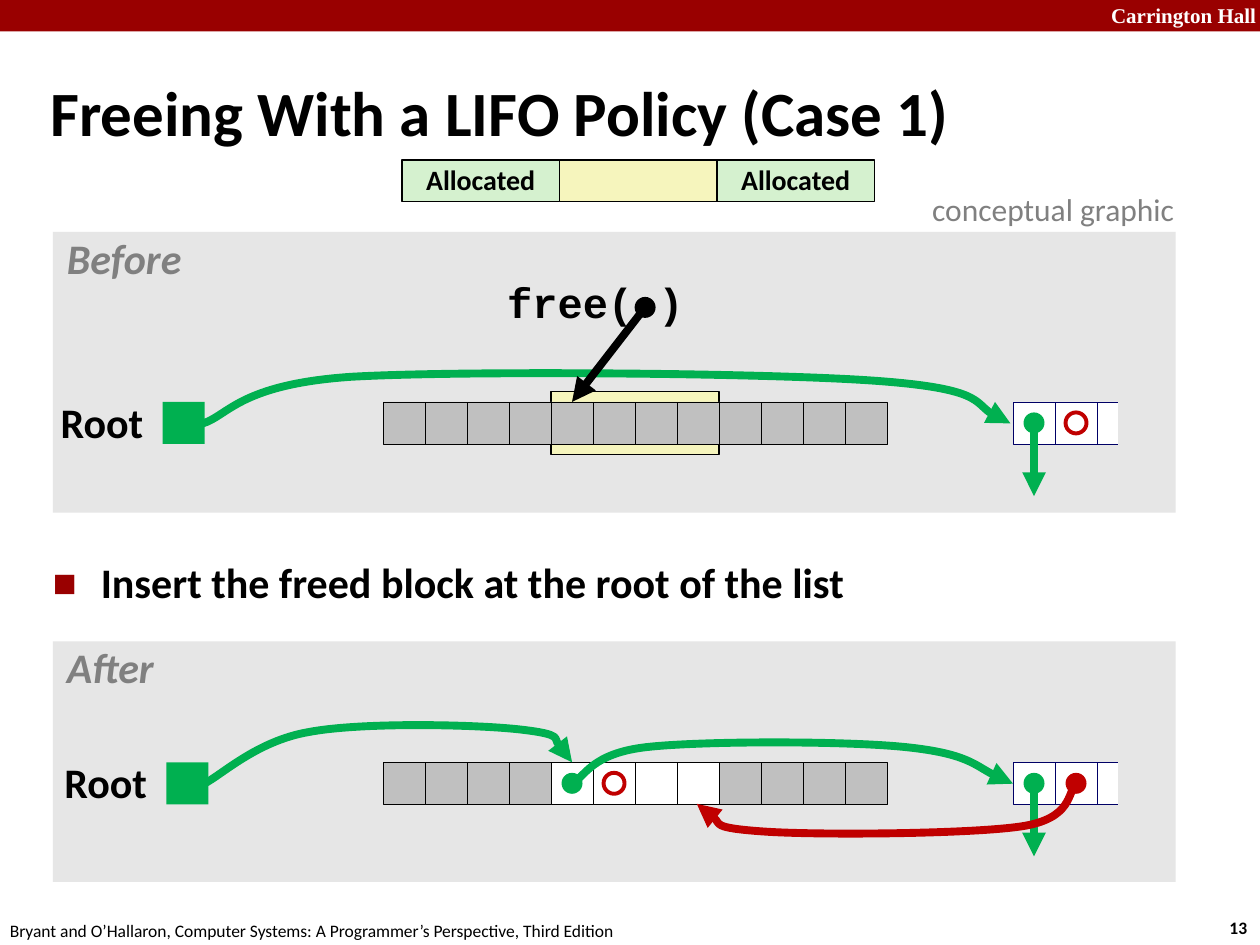
import lxml.etree
import pptx
import pptx.dml.color
import pptx.enum.shapes
import pptx.enum.text
import pptx.oxml.ns
import pptx.util

RGB = pptx.dml.color.RGBColor
Inches = pptx.util.Inches
Pt = pptx.util.Pt
qn = pptx.oxml.ns.qn
KIND = pptx.enum.shapes.MSO_SHAPE
ALIGN = pptx.enum.text.PP_ALIGN
ANCHOR = pptx.enum.text.MSO_ANCHOR

BLACK = RGB(0x00, 0x00, 0x00)
WHITE = RGB(0xFF, 0xFF, 0xFF)
MAROON = RGB(0x99, 0x00, 0x00)
RED = RGB(0xC0, 0x00, 0x00)
GREEN = RGB(0x00, 0xB0, 0x50)
NAVY = RGB(0x00, 0x00, 0x66)
GRAY = RGB(0x80, 0x80, 0x80)
SILVER = RGB(0xC0, 0xC0, 0xC0)
PALE = RGB(0xE6, 0xE6, 0xE6)
CREAM = RGB(0xF6, 0xF5, 0xBD)
MINT = RGB(0xD5, 0xF1, 0xCF)

CELL = 1 / 3
DOT = 1 / 6
HEAP = 2.62
LIST = 7.62


def write(frame, text, size=24, font="Calibri", color=BLACK, bold=True,
          italic=False, align=ALIGN.LEFT, space=1.0, wrap=False,
          anchor=ANCHOR.TOP, inset=(0.1, 0.05)):
    frame.word_wrap = wrap
    frame.auto_size = pptx.enum.text.MSO_AUTO_SIZE.NONE
    frame.vertical_anchor = anchor
    frame.margin_left = frame.margin_right = Inches(inset[0])
    frame.margin_top = frame.margin_bottom = Inches(inset[1])
    para = frame.paragraphs[0]
    para.alignment = align
    para.line_spacing = space
    run = para.add_run()
    run.text = text
    face = run.font
    face.name, face.size, face.bold, face.italic = font, Pt(size), bold, italic
    face.color.rgb = color
    return para


def label(host, box, text, **style):
    write(host.add_textbox(*map(Inches, box)).text_frame, text, **style)


def tag(host, box, text, **style):
    label(host, box, text, align=ALIGN.CENTER, space=0.9, inset=(0.05, 0.05), **style)


def shape(host, box, fill=None, line=None, width=0.25, kind=KIND.RECTANGLE):
    item = host.add_shape(kind, *map(Inches, box))
    item.shadow.inherit = False
    if fill is None:
        item.fill.background()
    else:
        item.fill.solid()
        item.fill.fore_color.rgb = fill
    if line is None:
        item.line.fill.background()
    else:
        item.line.color.rgb = line
        item.line.width = Pt(width)
    return item


def dot(host, x, y, color, ring=False):
    box = (x - DOT / 2, y - DOT / 2, DOT, DOT)
    if ring:
        shape(host, box, line=color, width=2.25, kind=KIND.OVAL)
    else:
        shape(host, box, color, kind=KIND.OVAL)


def point(item, color):
    item.line.color.rgb = color
    item.line.width = Pt(4.5)
    line = item.element.spPr.find(qn("a:ln"))
    lxml.etree.SubElement(line, qn("a:tailEnd"), type="triangle")


def arrow(host, start, end, color):
    straight = pptx.enum.shapes.MSO_CONNECTOR.STRAIGHT
    item = host.add_connector(straight, *map(Inches, start + end))
    point(item, color)
    lxml.etree.SubElement(item.element.spPr, qn("a:effectLst"))
    return item


def curve(host, left, top, spots, color):
    spots = [(Inches(left + x), Inches(top + y)) for x, y in spots]
    maker = host.build_freeform(*spots[0], scale=1.0)
    maker.add_line_segments(spots[1:], close=False)
    item = maker.convert_to_shape()
    item.shadow.inherit = False
    item.fill.background()
    track = next(item.element.iter(qn("a:path")))
    steps = track.findall(qn("a:lnTo"))
    for i in range(0, len(steps), 3):
        bend = lxml.etree.SubElement(track, qn("a:cubicBezTo"))
        for step in steps[i:i + 3]:
            bend.append(step[0])
            track.remove(step)
    point(item, color)


def row(host, x, y, fills, line):
    return [shape(host, (x + i * CELL, y, CELL, CELL), fill, line)
            for i, fill in enumerate(fills)]


def panel(host, box, title, base, root, fills, ring):
    left, top = box[:2]
    y = top + base
    mid = y + CELL / 2
    tag(host, (left + 0.05, top, 1.03 if ring else 0.81, 0.47), title,
        color=GRAY, italic=True)
    tag(host, (left + root - 0.86, y - 0.05, 0.76, 0.47), "Root")
    shape(host, (left + root, y, CELL, CELL), GREEN)
    cells = row(host, left + HEAP, y, fills, BLACK)
    group = host.add_group_shape().shapes
    row(group, left + LIST, y, [WHITE] * 3, NAVY)
    shape(group, (left + LIST + 2.5 * CELL, y - 0.08, CELL, 0.5), PALE)
    x = left + LIST + CELL / 2
    dot(host, x, mid, GREEN)
    arrow(host, (x, mid), (x, mid + 0.58), GREEN)
    dot(host, x + CELL, mid, RED, ring)
    return cells


def before(host, box):
    left, top = box[:2]
    shape(host, box, PALE)
    shape(host, (left + HEAP + 4 * CELL, top + 1.27, 4 * CELL, 0.5), CREAM, BLACK, 0.75)
    curve(host, left, top, [
        (1.19, 1.52), (1.39, 1.46), (1.48, 1.21), (2.37, 1.15),
        (3.25, 1.1), (5.63, 1.12), (6.5, 1.18),
        (7.37, 1.24), (7.37, 1.45), (7.6, 1.52)], GREEN)
    cells = panel(host, box, "Before", 1.35, 0.87, [SILVER] * 12, True)
    tag(host, (left + 3.55, top + 0.35, 1.51, 0.47), "free( )", font="Courier New")
    x, y = left + 4.7, top + 0.6
    dot(host, x, y, BLACK)
    call = arrow(host, (x, y), (left + 4.12, top + 1.35), BLACK)
    call.end_connect(cells[4], 0)


def after(host, box):
    left, top = box[:2]
    shape(host, box, PALE)
    fills = [SILVER] * 4 + [WHITE] * 4 + [SILVER] * 4
    panel(host, box, "After", 0.96, 0.9, fills, False)
    x, y = left + HEAP + 4.5 * CELL, top + 0.96 + CELL / 2
    dot(host, x, y, GREEN)
    dot(host, x + CELL, y, RED, True)
    curve(host, left, top, [
        (4.12, 1.13), (4.22, 1.08), (4.27, 0.89), (4.71, 0.84),
        (5.15, 0.79), (6.29, 0.79), (6.77, 0.84),
        (7.25, 0.89), (7.44, 1.07), (7.62, 1.13)], GREEN)
    curve(host, left, top, [
        (8.12, 1.14), (8.05, 1.19), (8.1, 1.41), (7.68, 1.47),
        (7.27, 1.53), (6.07, 1.54), (5.64, 1.51),
        (5.21, 1.48), (5.22, 1.34), (5.11, 1.29)], RED)
    curve(host, left, top, [
        (1.2, 1.13), (1.34, 1.06), (1.62, 0.79), (2.03, 0.72),
        (2.45, 0.64), (3.36, 0.66), (3.71, 0.7),
        (4.06, 0.74), (4.04, 0.9), (4.12, 0.96)], GREEN)


def blocks(host, box):
    left, top, wide, high = box
    group = host.add_group_shape().shapes
    for i, (text, fill) in enumerate([("Allocated", MINT), ("", CREAM), ("Allocated", MINT)]):
        item = shape(group, (left + i * wide / 3, top, wide / 3, high), fill, BLACK, 1)
        if text:
            write(item.text_frame, text, size=16, align=ALIGN.CENTER, space=0.98,
                  anchor=ANCHOR.MIDDLE)


def frame(host, box):
    left, top, wide, high = box
    shape(host, (left, top, wide, 0.25), MAROON)
    label(host, (left + wide - 1.36, top - 0.03, 1.43, 0.3), "Carrington Hall", size=12,
          font="Times New Roman", color=WHITE, align=ALIGN.RIGHT)
    label(host, (left + wide - 0.34, top + high - 0.27, 0.37, 0.27), "13", size=10)
    label(host, (left - 0.02, top + high - 0.25, 5.08, 0.27),
          "Bryant and O’Hallaron, Computer Systems: A Programmer’s Perspective, Third Edition",
          size=10, bold=False)


def place(item, box):
    item.left, item.top, item.width, item.height = map(Inches, box)
    return item.text_frame


def head(item, box):
    para = write(place(item, box), "Freeing With a LIFO Policy (Case 1)", size=36,
                 space=0.87, wrap=True, anchor=ANCHOR.MIDDLE)
    props = para._p.get_or_add_pPr()
    props.set("marL", str(Inches(0.13)))
    props.set("indent", str(Inches(-0.13)))


def body(item, box):
    para = write(place(item, box), "Insert the freed block at the root of the list",
                 space=0.95, wrap=True)
    para.space_before = Pt(5)
    props = para._p.get_or_add_pPr()
    props.set("marL", str(Inches(0.38)))
    props.set("indent", str(Inches(-0.38)))
    tint = lxml.etree.SubElement(props, qn("a:buClr"))
    lxml.etree.SubElement(tint, qn("a:srgbClr"), val=str(MAROON))
    lxml.etree.SubElement(props, qn("a:buSzPct"), val="60000")
    lxml.etree.SubElement(props, qn("a:buFont"), typeface="Calibri")
    lxml.etree.SubElement(props, qn("a:buChar"), char="■")


def main():
    deck = pptx.Presentation()
    deck.slide_width, deck.slide_height = Inches(10), Inches(7.5)
    slide = deck.slides.add_slide(deck.slide_layouts[1])
    host = slide.shapes
    frame(host, (0, 0, 10, 7.5))
    head(host.title, (0.3, 0.5, 9.53, 0.86))
    body(slide.placeholders[1], (0.32, 4.4, 9.09, 0.61))
    after(host, (0.42, 5.09, 8.91, 1.91))
    before(host, (0.42, 1.84, 8.91, 2.23))
    label(host, (7.3, 1.46, 2.17, 0.4), "conceptual graphic", size=18, color=GRAY, bold=False)
    blocks(host, (3.19, 1.27, 3.75, 0.33))
    deck.save("out.pptx")


if __name__ == "__main__":
    main()
